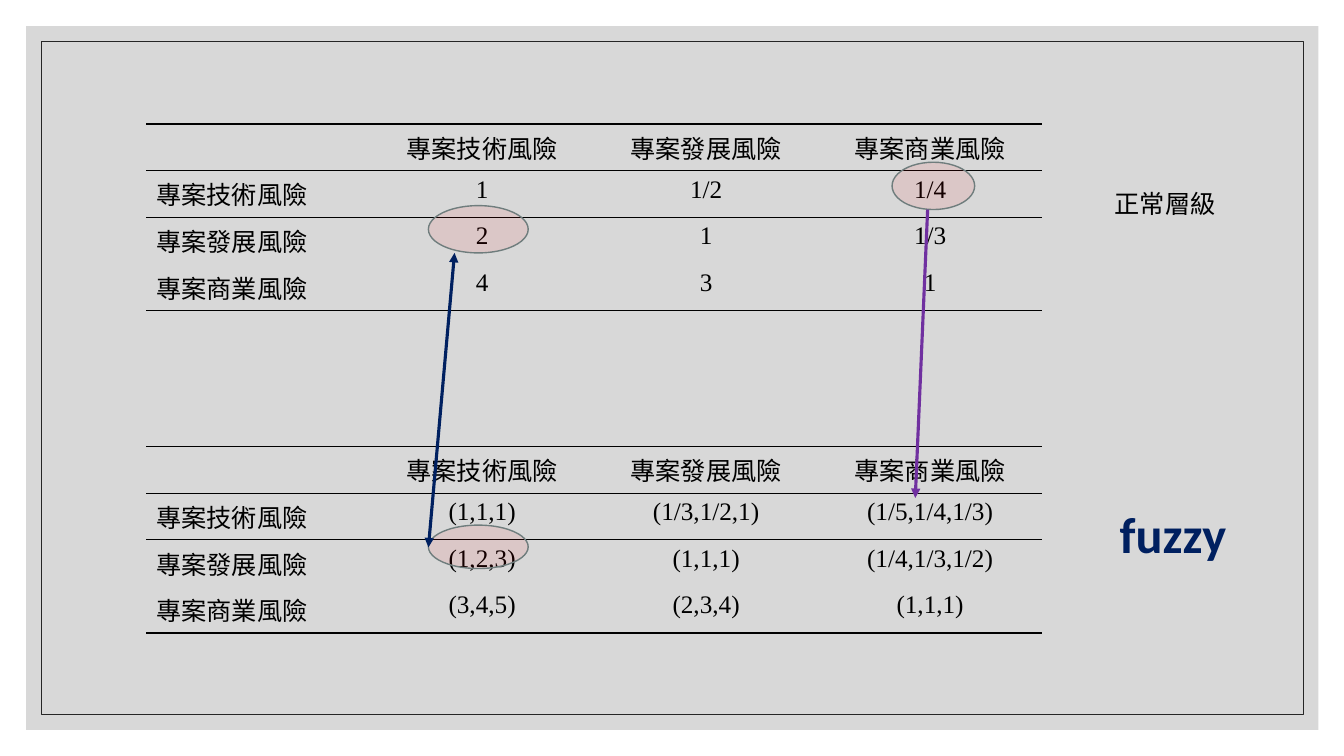
import dataclasses

import lxml.etree
import pptx
import pptx.dml.color
import pptx.enum.shapes
import pptx.enum.text
import pptx.oxml.ns
import pptx.util

Pt = pptx.util.Pt
RGB = pptx.dml.color.RGBColor.from_string
qn = pptx.oxml.ns.qn
KIND = pptx.enum.shapes.MSO_SHAPE

COLOR = {"panel": "BFBFBF", "frame": "262626", "ink": "000000", "navy": "002060",
         "violet": "7030A0", "red": "FF0000", "edge": "6F7D7D"}
SERIF, SANS = "Times New Roman", "Calibri"
PLAIN = "{2D5ABB26-0587-4C30-8999-92F81FD0307C}"
RISKS = ["專案技術風險", "專案發展風險", "專案商業風險"]
LEFT, COL, ROW = 104.4, 160, 29.2


@dataclasses.dataclass
class Shape:
    left: float
    top: float
    width: float
    height: float
    kind: int
    fill: str = ""
    alpha: int = 100
    line: str = ""
    weight: float = 1


@dataclasses.dataclass
class Grid:
    top: float
    rows: list[list[str]]


@dataclasses.dataclass
class Label:
    left: float
    top: float
    height: float
    text: str
    size: int
    color: str
    bold: bool


@dataclasses.dataclass
class Arrow:
    start: tuple[float, float]
    end: tuple[float, float]
    color: str
    heads: list[str]


def ring(left: float, top: float, width: float, height: float) -> Shape:
    return Shape(left, top, width, height, KIND.FLOWCHART_CONNECTOR,
                 "red", 8, "edge")


PANELS = [
    Shape(18.7, 18.7, 923, 502.6, KIND.RECTANGLE, "panel", 60),
    Shape(29.5, 29.5, 901.4, 481, KIND.RECTANGLE, line="frame", weight=0.5),
]
GRIDS = [
    Grid(88.6, [["1", "1/2", "1/4"], ["2", "1", "1/3"], ["4", "3", "1"]]),
    Grid(319, [["(1,1,1)", "(1/3,1/2,1)", "(1/5,1/4,1/3)"],
               ["(1,2,3)", "(1,1,1)", "(1/4,1/3,1/2)"],
               ["(3,4,5)", "(2,3,4)", "(1,1,1)"]]),
]
LABELS = [
    Label(792.7, 355.7, 51, "fuzzy", 36, "navy", True),
    Label(789.1, 131, 29, "正常層級", 18, "ink", False),
]
RINGS = [ring(637.2, 115.9, 59, 33.8), ring(306, 146.9, 71.3, 33.8),
         ring(306, 375.1, 71.3, 31)]
ARROWS = [
    Arrow((662.6, 149.8), (653.8, 355.7), "violet", ["tailEnd"]),
    Arrow((324.7, 180.7), (306, 391), "navy", ["headEnd", "tailEnd"]),
]


def style(para, font: str, size: int, color: str, bold: bool = False) -> None:
    for run in para.runs:
        run.font.name = font
        run.font.size = Pt(size)
        run.font.bold = bold
        run.font.color.rgb = RGB(COLOR[color])


def draw_shape(slide, item: Shape) -> None:
    shape = slide.shapes.add_shape(item.kind, Pt(item.left), Pt(item.top),
                                   Pt(item.width), Pt(item.height))
    shape.shadow.inherit = False
    if item.fill:
        shape.fill.solid()
        shape.fill.fore_color.rgb = RGB(COLOR[item.fill])
        tint = shape.fill._xPr.find(".//" + qn("a:srgbClr"))
        lxml.etree.SubElement(tint, qn("a:alpha"), val=str(item.alpha * 1000))
    else:
        shape.fill.background()
    if item.line:
        shape.line.color.rgb = RGB(COLOR[item.line])
        shape.line.width = Pt(item.weight)
    else:
        shape.line.fill.background()


def add_rule(cell, side: str) -> None:
    rule = lxml.etree.SubElement(cell._tc.get_or_add_tcPr(), qn("a:" + side),
                                 w=str(Pt(1)))
    fill = lxml.etree.SubElement(rule, qn("a:solidFill"))
    lxml.etree.SubElement(fill, qn("a:srgbClr"), val=COLOR["ink"])


def draw_grid(slide, grid: Grid) -> None:
    rows = [["", *RISKS]] + [[risk, *row] for risk, row in zip(RISKS, grid.rows)]
    count = len(rows)
    table = slide.shapes.add_table(count, count, Pt(LEFT), Pt(grid.top),
                                   Pt(COL * count), Pt(ROW * count)).table
    table.first_row = table.horz_banding = False
    table._tbl.tblPr.find(qn("a:tableStyleId")).text = PLAIN
    for r, row in enumerate(rows):
        table.rows[r].height = Pt(ROW)
        for c, text in enumerate(row):
            cell = table.cell(r, c)
            cell.text_frame.text = text
            para = cell.text_frame.paragraphs[0]
            if c:
                para.alignment = pptx.enum.text.PP_ALIGN.CENTER
            style(para, SERIF, 18, "ink")
            # Rules above and below the head row, and below the last row
            if r < 2:
                add_rule(cell, "lnT")
            if r in (0, count - 1):
                add_rule(cell, "lnB")
            cell.fill.background()


def draw_label(slide, item: Label) -> None:
    frame = slide.shapes.add_textbox(Pt(item.left), Pt(item.top), Pt(95.8),
                                     Pt(item.height)).text_frame
    frame.word_wrap = True
    frame.auto_size = pptx.enum.text.MSO_AUTO_SIZE.SHAPE_TO_FIT_TEXT
    frame.text = item.text
    style(frame.paragraphs[0], SANS, item.size, item.color, item.bold)


def draw_arrow(slide, item: Arrow) -> None:
    ends = [Pt(value) for value in (*item.start, *item.end)]
    arrow = slide.shapes.add_connector(
        pptx.enum.shapes.MSO_CONNECTOR.STRAIGHT, *ends)
    arrow.line.color.rgb = RGB(COLOR[item.color])
    arrow.line.width = Pt(2.25)
    for head in item.heads:
        lxml.etree.SubElement(arrow.line._get_or_add_ln(), qn("a:" + head),
                              type="triangle")
    lxml.etree.SubElement(arrow._element.spPr, qn("a:effectLst"))


def main() -> None:
    deck = pptx.Presentation()
    deck.slide_width, deck.slide_height = Pt(960), Pt(540)
    slide = deck.slides.add_slide(deck.slide_layouts[6])
    # Backdrop
    for panel in PANELS:
        draw_shape(slide, panel)
    # Tables and their labels
    for grid in GRIDS:
        draw_grid(slide, grid)
    for label in LABELS:
        draw_label(slide, label)
    # Marked cells and the links between them
    for mark in RINGS:
        draw_shape(slide, mark)
    for arrow in ARROWS:
        draw_arrow(slide, arrow)
    deck.save("out.pptx")


if __name__ == "__main__":
    main()
